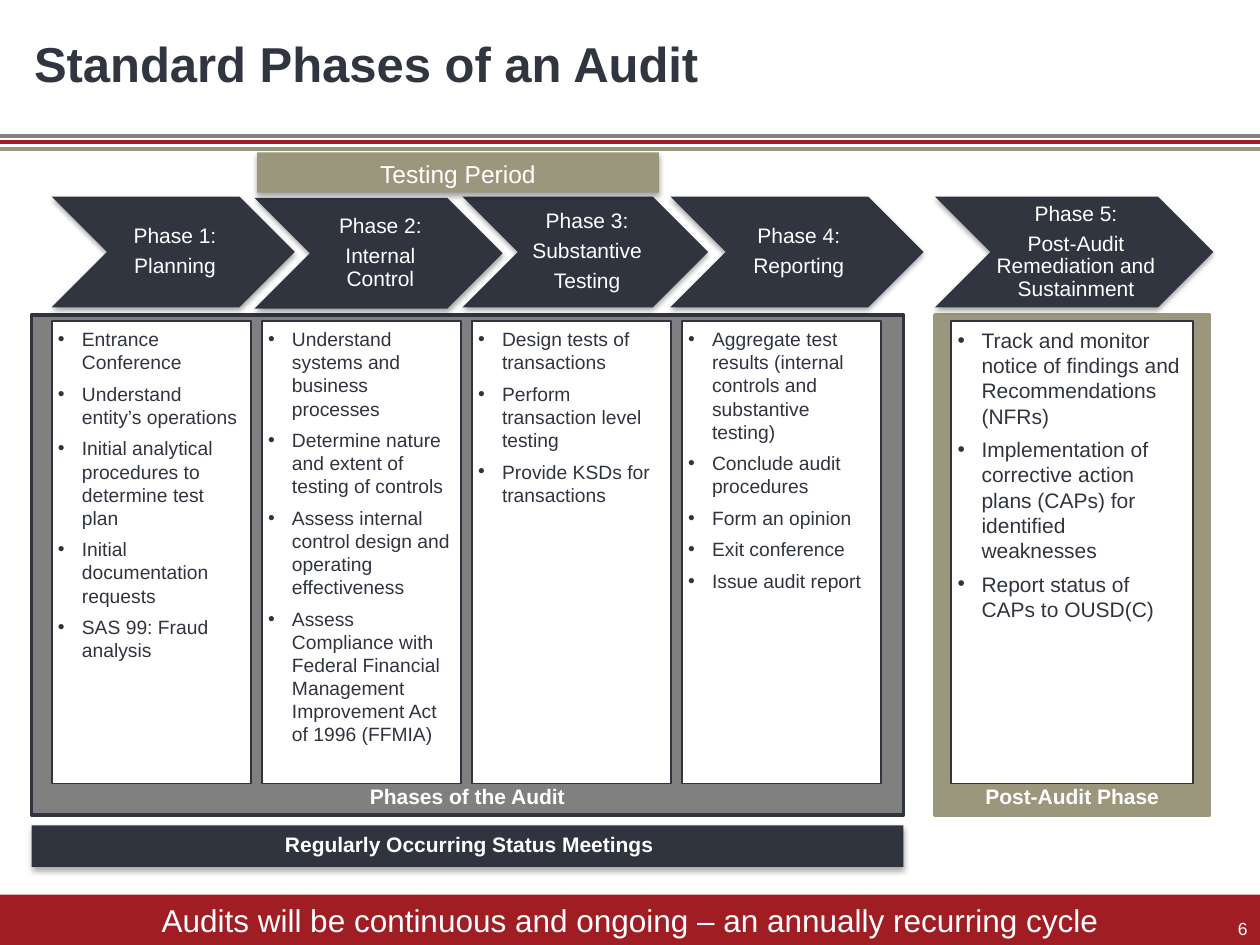
from dataclasses import dataclass

from lxml.etree import SubElement
from pptx import Presentation
from pptx.dml.color import RGBColor
from pptx.enum.shapes import MSO_CONNECTOR, MSO_SHAPE
from pptx.enum.text import MSO_ANCHOR as Anchor, PP_ALIGN as Align
from pptx.oxml.ns import qn
from pptx.util import Inches, Pt

WHITE = RGBColor(0xFF, 0xFF, 0xFF)
BLACK = RGBColor(0x00, 0x00, 0x00)
NAVY = RGBColor(0x31, 0x35, 0x40)
INK = RGBColor(0x30, 0x34, 0x3F)
GRAY = RGBColor(0x80, 0x80, 0x80)
RED = RGBColor(0xA1, 0x1D, 0x24)
KHAKI = RGBColor(0x9A, 0x97, 0x7C)

DEFAULT_INSETS = (0.1, 0.05, 0.1, 0.05)
CARD_INSETS = (0.05, 0.05, 0.05, 0.05)
CHEVRON_INSETS = (0.05, 0.02, 0.02, 0.02)
STATUS_INSETS = (0.49, 0.02, 0.46, 0.02)
CARD_LEFT, CARD_PITCH, CARD_WIDTH = 0.41, 1.667, 1.58


@dataclass(frozen=True)
class Phase:
    chevron_box: tuple[float, float, float, float]
    chevron_color: RGBColor
    heading: list[str]
    card_left: float
    card_width: float
    bullets: list[str]
    bullet_size: int = 11


PHASES = [
    Phase((0.41, 1.56, 1.93, 0.88), NAVY, ["Phase 1:", "Planning"],
          CARD_LEFT, CARD_WIDTH,
          ["Entrance Conference",
           "Understand entity’s operations",
           "Initial analytical procedures to determine test plan",
           "Initial documentation requests",
           "SAS 99: Fraud analysis"]),
    Phase((2.02, 1.57, 1.97, 0.88), INK, ["Phase 2:", "Internal Control"],
          CARD_LEFT + CARD_PITCH, CARD_WIDTH,
          ["Understand systems and business processes",
           "Determine nature and extent of testing of controls",
           "Assess internal control design and operating effectiveness",
           "Assess Compliance with Federal Financial Management Improvement Act of 1996 (FFMIA)"]),
    Phase((3.67, 1.56, 1.95, 0.88), INK, ["Phase 3:", "Substantive", "Testing"],
          CARD_LEFT + 2 * CARD_PITCH, CARD_WIDTH,
          ["Design tests of transactions",
           "Perform transaction level testing",
           "Provide KSDs for transactions"]),
    Phase((5.32, 1.56, 2.01, 0.88), NAVY, ["Phase 4:", "Reporting"],
          CARD_LEFT + 3 * CARD_PITCH, CARD_WIDTH,
          ["Aggregate test results (internal controls and substantive testing)",
           "Conclude audit procedures",
           "Form an opinion",
           "Exit conference",
           "Issue audit report"]),
    Phase((7.42, 1.56, 2.21, 0.88), NAVY,
          ["Phase 5:", "Post-Audit Remediation and Sustainment"],
          7.55, 1.92,
          ["Track and monitor notice of findings and Recommendations (NFRs)",
           "Implementation of corrective action plans (CAPs) for identified weaknesses",
           "Report status of CAPs to OUSD(C)"], 12),
]


def write_text(shape, lines: list[str], *, size: float, color: RGBColor = WHITE,
               bold: bool = False, align: Align = Align.CENTER,
               anchor: Anchor = Anchor.MIDDLE, insets: tuple = DEFAULT_INSETS,
               line_spacing: float = 1.0, gap: float = 0,
               bulleted: bool = False) -> None:
    frame = shape.text_frame
    frame.word_wrap = True
    frame.vertical_anchor = anchor
    (frame.margin_left, frame.margin_top,
     frame.margin_right, frame.margin_bottom) = map(Inches, insets)
    for index, line in enumerate(lines):
        paragraph = frame.add_paragraph() if index else frame.paragraphs[0]
        paragraph.alignment = align
        paragraph.line_spacing = line_spacing
        paragraph.space_before = Pt(gap if index else 0)
        if bulleted:
            properties = paragraph._p.get_or_add_pPr()
            properties.set("marL", str(Inches(0.19)))
            properties.set("indent", str(-Inches(0.19)))
            SubElement(properties, qn("a:buFont")).set("typeface", "Arial")
            SubElement(properties, qn("a:buChar")).set("char", "•")
        run = paragraph.add_run()
        run.text = line
        run.font.name = "Arial"
        run.font.size = Pt(size)
        run.font.bold = bold
        run.font.color.rgb = color


def add_box(slide, box: tuple, fill: RGBColor, *, border: RGBColor | None = None,
            border_width: float = 1, kind: MSO_SHAPE = MSO_SHAPE.RECTANGLE,
            shadow: bool = False):
    shape = slide.shapes.add_shape(kind, *map(Inches, box))
    shape.fill.solid()
    shape.fill.fore_color.rgb = fill
    if border is None:
        shape.line.fill.background()
    else:
        shape.line.color.rgb = border
        shape.line.width = Pt(border_width)
    shape.shadow.inherit = False
    if shadow:
        effects = shape._element.spPr.find(qn("a:effectLst"))
        outer = SubElement(effects, qn("a:outerShdw"), blurRad=str(Pt(3.1)),
                           dist=str(Pt(1.8)), dir="5400000", rotWithShape="0")
        tint = SubElement(outer, qn("a:srgbClr"), val=str(BLACK))
        SubElement(tint, qn("a:alpha"), val="35000")
    return shape


def add_rule(slide, top: float, color: RGBColor) -> None:
    rule = slide.shapes.add_connector(
        MSO_CONNECTOR.STRAIGHT, Inches(-0.01), Inches(top), Inches(10), Inches(top))
    rule.line.color.rgb = color
    rule.line.width = Pt(2.25)
    SubElement(rule._element.spPr, qn("a:effectLst"))


def add_phase(slide, phase: Phase) -> None:
    chevron = add_box(slide, phase.chevron_box, phase.chevron_color,
                      kind=MSO_SHAPE.CHEVRON, shadow=True)
    write_text(chevron, phase.heading, size=12, insets=CHEVRON_INSETS,
               line_spacing=0.9, gap=4.2)
    card = add_box(slide, (phase.card_left, 2.55, phase.card_width, 3.67),
                   WHITE, border=INK)
    write_text(card, phase.bullets, size=phase.bullet_size, color=INK,
               align=Align.LEFT, anchor=Anchor.TOP, insets=CARD_INSETS,
               gap=4.8, bulleted=True)


def main() -> None:
    presentation = Presentation()
    presentation.slide_width = Inches(10)
    presentation.slide_height = Inches(7.5)
    slide = presentation.slides.add_slide(presentation.slide_layouts[5])

    for top, color in ((1.08, GRAY), (1.13, RED), (1.18, KHAKI)):
        add_rule(slide, top, color)

    title = slide.shapes.title
    title.left, title.top, title.width, title.height = map(Inches, (0.17, 0, 8.17, 1))
    write_text(title, ["Standard Phases of an Audit"], size=28, color=NAVY,
               bold=True, align=Align.LEFT)

    footer = add_box(slide, (0, 7.1, 10, 0.4), RED)
    write_text(footer, ["Audits will be continuous and ongoing – an annually recurring cycle"],
               size=18)
    page_number = slide.shapes.add_textbox(*map(Inches, (7.67, 7.1, 2.33, 0.4)))
    write_text(page_number, ["6"], size=10, align=Align.RIGHT, anchor=Anchor.BOTTOM)

    for label, left, width, fill, border in (
            ("Post-Audit Phase", 7.42, 2.18, KHAKI, KHAKI),
            ("Phases of the Audit", 0.25, 6.92, GRAY, INK)):
        panel = add_box(slide, (left, 2.5, width, 3.97), fill,
                        border=border, border_width=2)
        write_text(panel, [label], size=12, bold=True, anchor=Anchor.BOTTOM)

    for phase in PHASES:
        add_phase(slide, phase)

    testing_period = add_box(slide, (2.04, 1.21, 3.19, 0.32), KHAKI, shadow=True)
    write_text(testing_period, ["Testing Period"], size=14,
               insets=(0.08, 0.08, 0.08, 0.08), line_spacing=1.06)
    status_meetings = add_box(slide, (0.25, 6.55, 6.92, 0.33), INK, shadow=True)
    write_text(status_meetings, ["Regularly Occurring Status Meetings"], size=12,
               bold=True, insets=STATUS_INSETS, line_spacing=0.9)

    presentation.save("out.pptx")


if __name__ == "__main__":
    main()
